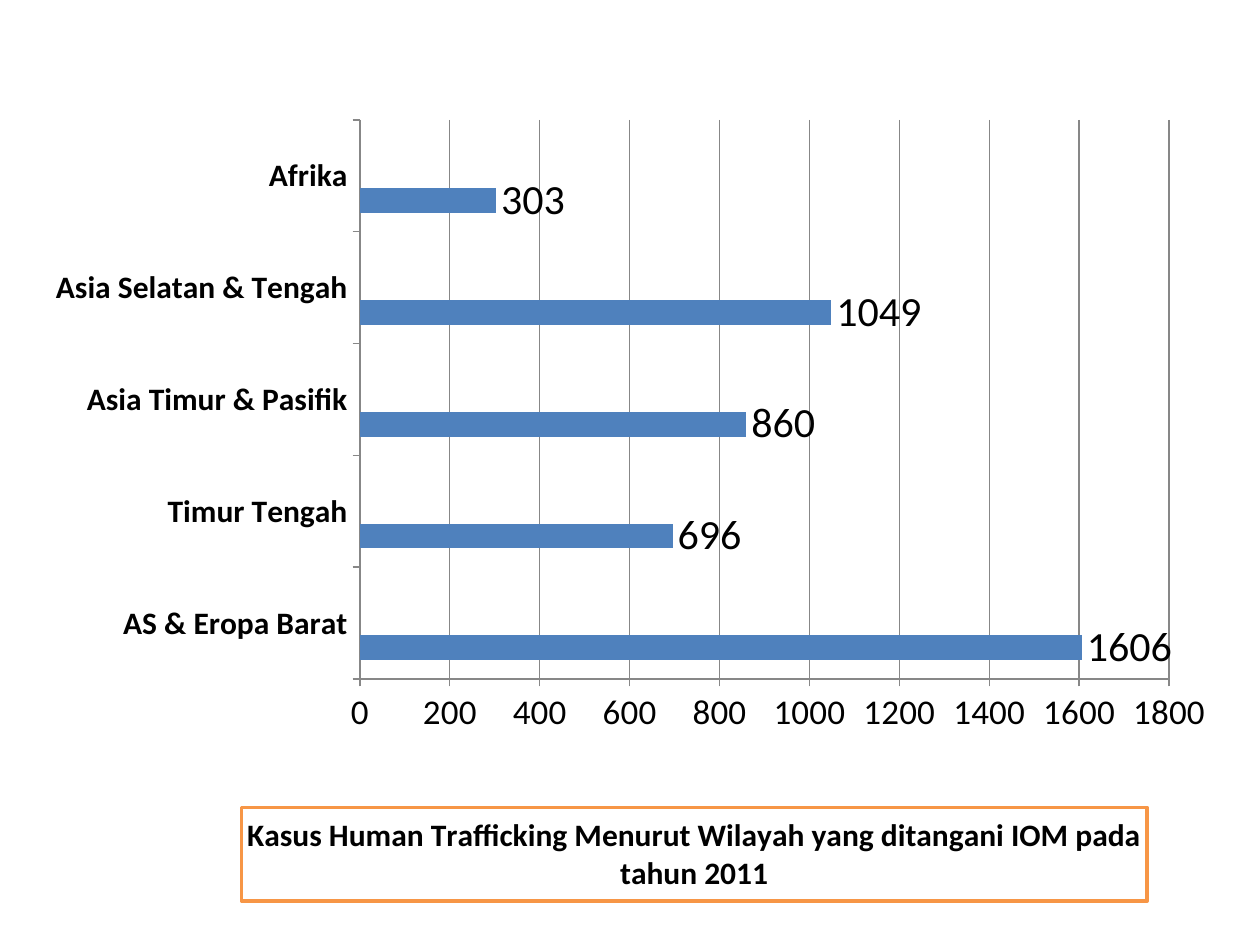
"""Build a slide with a bar chart of trafficking cases by region."""
from lxml.etree import SubElement
from pptx import Presentation
from pptx.chart.data import CategoryChartData
from pptx.dml.color import RGBColor
from pptx.enum.chart import XL_CHART_TYPE as ChartType
from pptx.enum.chart import XL_LABEL_POSITION as LabelPosition
from pptx.enum.chart import XL_TICK_MARK as TickMark
from pptx.oxml.ns import qn
from pptx.util import Emu, Pt

PX = 914400 // 126
COLORS = {"text": "000000", "paper": "FFFFFF", "axis": "878787", "frame": "F79646"}
SERIES_COLORS = ["4F81BD", "C0504D", "9BBB59"]
CASES = {
    "AS & Eropa Barat": 1606,
    "Timur Tengah": 696,
    "Asia Timur & Pasifik": 860,
    "Asia Selatan & Tengah": 1049,
    "Afrika": 303,
}
CAPTION = "Kasus Human Trafficking Menurut Wilayah yang ditangani IOM pada tahun 2011"


def set_all(target, values):
    for name, value in values.items():
        setattr(target, name, value)


class SlideBuilder:
    def __init__(self, slide, family="Calibri"):
        self.slide = slide
        self.family = family

    def style_font(self, font, size, bold=False):
        set_all(font, {"name": self.family, "size": Pt(size), "bold": bold})
        font.color.rgb = RGBColor.from_string(COLORS["text"])

    def style_line(self, line, color, width):
        line.color.rgb = RGBColor.from_string(color)
        line.width = Pt(width)

    def place(self, layout, fractions, inner=False):
        manual = SubElement(layout, qn("c:manualLayout"))
        settings = {"layoutTarget": "inner"} if inner else {}
        settings.update({f"{side}Mode": "edge" for side in "xy"})
        settings.update(fractions)
        for tag, value in settings.items():
            SubElement(manual, qn(f"c:{tag}")).set("val", str(value))

    def axis(self, axis, size, bold, values):
        set_all(axis, {"major_tick_mark": TickMark.OUTSIDE,
                       "minor_tick_mark": TickMark.NONE, **values})
        self.style_font(axis.tick_labels.font, size, bold)
        self.style_line(axis.format.line, COLORS["axis"], 0.75)

    def axis_caption(self, axis, text, fractions):
        title = axis.axis_title
        title.text_frame.text = text
        self.style_font(title.text_frame.paragraphs[0].runs[0].font, 18, True)
        title.format.fill.solid()
        title.format.fill.fore_color.rgb = RGBColor.from_string(COLORS["paper"])
        self.style_line(title.format.line, COLORS["frame"], 2)
        self.place(title._element.find(qn("c:layout")), fractions)

    def bar_chart(self, box, cases, caption):
        data = CategoryChartData()
        data.categories = list(cases)
        data.add_series("Series 1", list(cases.values()))
        for number in (2, 3):
            data.add_series(f"Series {number}", [None] * len(cases))
        chart = self.slide.shapes.add_chart(
            ChartType.BAR_CLUSTERED, *(Emu(side * PX) for side in box), data).chart
        set_all(chart, {"has_legend": False, "has_title": False})
        self.style_font(chart.font, 10)

        plot = chart.plots[0]
        set_all(plot, {"gap_width": 150, "overlap": 0, "vary_by_categories": False})
        for series, color in zip(plot.series, SERIES_COLORS):
            series.format.fill.solid()
            series.format.fill.fore_color.rgb = RGBColor.from_string(color)
        labels = plot.series[0].data_labels
        set_all(labels, {"show_value": True, "position": LabelPosition.OUTSIDE_END})
        self.style_font(labels.font, 24)

        self.axis(chart.category_axis, 18, True, {"has_major_gridlines": False})
        scale = {"minimum_scale": 0, "maximum_scale": 1800, "major_unit": 200}
        self.axis(chart.value_axis, 20, False, {"has_major_gridlines": True, **scale})
        self.style_line(chart.value_axis.major_gridlines.format.line, COLORS["axis"], 0.75)
        self.axis_caption(chart.value_axis, caption, {"x": 0.175, "y": 0.892})

        area = chart._chartSpace.chart.plotArea
        layout = area.find(qn("c:layout"))
        if layout is None:
            layout = SubElement(area, qn("c:layout"))
            area.insert(0, layout)
        self.place(layout, {"x": 0.274, "y": 0.019, "w": 0.676, "h": 0.71}, inner=True)


def main():
    deck = Presentation()
    set_all(deck, {"slide_width": Emu(1260 * PX), "slide_height": Emu(945 * PX)})
    builder = SlideBuilder(deck.slides.add_slide(deck.slide_layouts[6]))
    builder.bar_chart((32, 105, 1197, 798), CASES, CAPTION)
    deck.save("out.pptx")


if __name__ == "__main__":
    main()
